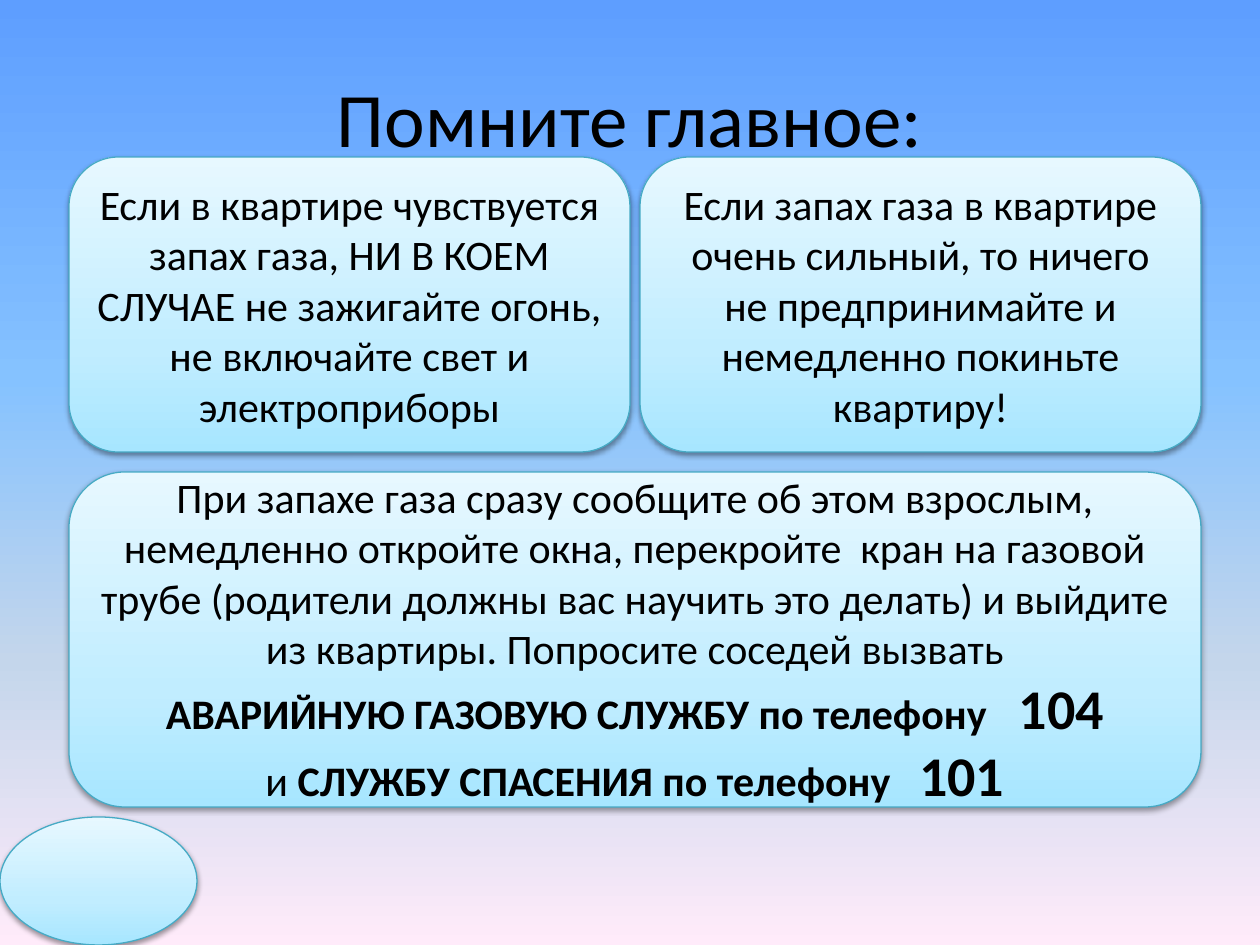
from dataclasses import dataclass

from lxml import etree
from pptx import Presentation
from pptx.dml.color import RGBColor
from pptx.enum.shapes import MSO_SHAPE
from pptx.enum.text import MSO_ANCHOR, PP_ALIGN
from pptx.oxml.ns import qn
from pptx.util import Pt

PX = 914400 / 126
CENTER = PP_ALIGN.CENTER
MIDDLE = MSO_ANCHOR.MIDDLE
ROUNDED = MSO_SHAPE.ROUNDED_RECTANGLE
OVAL = MSO_SHAPE.OVAL


@dataclass(frozen=True)
class Theme:
    font: str = "Calibri"
    text: str = "000000"
    line: str = "46AAC5"
    shadow: str = "000000"
    title_size: int = 44
    body_size: int = 24
    phone_size: int = 32
    sky: tuple = ((0, "5E9EFF"), (40, "85C2FF"), (70, "C4D6EB"), (100, "FFEBFA"))
    card: tuple = ((0, "A7E6FF"), (35, "C1EDFF"), (100, "E7F8FF"))


def px(*values):
    return [round(v * PX) for v in values]


def add_run(p, text, font, color, size, bold=False):
    r = p.add_run()
    r.text = text
    r.font.name = font
    r.font.size = Pt(size)
    r.font.bold = bold
    r.font.color.rgb = RGBColor.from_string(color)


def add_color(parent, color):
    return etree.SubElement(parent, qn("a:srgbClr"), val=color)


def set_gradient(fill, element, stops, angle):
    fill.gradient()
    grad = next(element.iter(qn("a:gradFill")))
    gs_list = grad.find(qn("a:gsLst"))
    for gs in list(gs_list):
        gs_list.remove(gs)
    for position, color in stops:
        add_color(etree.SubElement(gs_list, qn("a:gs"), pos=str(position * 1000)), color)
    grad.find(qn("a:lin")).set("ang", str(angle * 60000))


class SlideBuilder:
    def __init__(self, prs, theme):
        self.theme = theme
        self.s = prs.slides.add_slide(prs.slide_layouts[5])

    def background(self):
        set_gradient(self.s.background.fill, self.s.element, self.theme.sky, 90)

    def fill_text(self, tf, paragraphs, size):
        tf.word_wrap = True
        tf.vertical_anchor = MIDDLE
        for i, runs in enumerate(paragraphs):
            p = tf.add_paragraph() if i else tf.paragraphs[0]
            p.alignment = CENTER
            for text, style in runs:
                add_run(p, text, self.theme.font, self.theme.text, **{"size": size, **style})

    def title(self, text, x, y, w, h):
        sp = self.s.shapes.title
        sp.left, sp.top, sp.width, sp.height = px(x, y, w, h)
        self.fill_text(sp.text_frame, [[(text, {})]], self.theme.title_size)

    def shadow(self, sp):
        sp.shadow.inherit = False
        effects = sp.element.spPr.find(qn("a:effectLst"))
        outer = etree.SubElement(effects, qn("a:outerShdw"), blurRad="40000",
                                 dist="20000", dir="5400000", rotWithShape="0")
        etree.SubElement(add_color(outer, self.theme.shadow), qn("a:alpha"), val="38000")

    def card(self, kind, x, y, w, h, paragraphs=()):
        sp = self.s.shapes.add_shape(kind, *px(x, y, w, h))
        set_gradient(sp.fill, sp.element, self.theme.card, 270)
        sp.line.color.rgb = RGBColor.from_string(self.theme.line)
        sp.line.width = Pt(0.75)
        self.shadow(sp)
        self.fill_text(sp.text_frame, paragraphs, self.theme.body_size)


def main():
    theme = Theme()
    prs = Presentation()
    prs.slide_width, prs.slide_height = px(1260, 945)
    slide = SlideBuilder(prs, theme)
    slide.background()
    slide.title("Помните главное:", 63, 38, 1134, 157)

    left, top, card_w, card_h, gap = 69, 157, 561, 295, 10
    warnings = (
        "Если в квартире чувствуется запах газа, НИ В КОЕМ СЛУЧАЕ не зажигайте огонь, "
        "не включайте свет и электроприборы",
        "Если запах газа в квартире очень сильный, то ничего не предпринимайте "
        "и немедленно покиньте квартиру!",
    )
    for i, text in enumerate(warnings):
        slide.card(ROUNDED, left + i * (card_w + gap), top, card_w, card_h, [[(text, {})]])

    bold = {"bold": True}
    phone = {"bold": True, "size": theme.phone_size}
    slide.card(ROUNDED, left, top + card_h + 2 * gap, 2 * card_w + gap, 335, [
        [("При запахе газа сразу сообщите об этом взрослым, немедленно откройте окна, "
          "перекройте  кран на газовой трубе (родители должны вас научить это делать) "
          "и выйдите из квартиры. Попросите соседей вызвать", {})],
        [("АВАРИЙНУЮ ГАЗОВУЮ СЛУЖБУ по телефону  ", bold), (" 104", phone)],
        [("и ", {}), ("СЛУЖБУ СПАСЕНИЯ по телефону   ", bold), ("101", phone)],
    ])
    slide.card(OVAL, 0, 817, 197, 128)
    prs.save("out.pptx")


if __name__ == "__main__":
    main()
